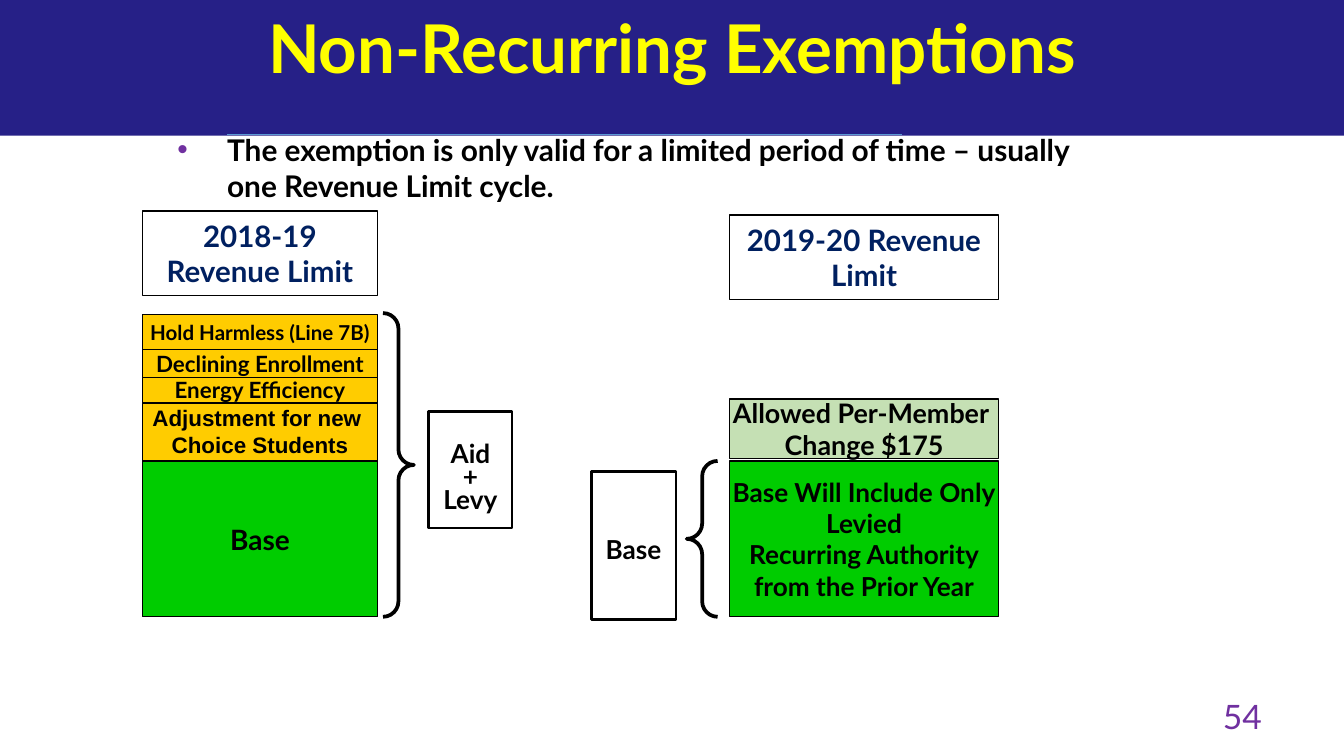
from dataclasses import dataclass

from lxml.etree import SubElement
from pptx import Presentation
from pptx.dml.color import RGBColor
from pptx.enum.shapes import MSO_CONNECTOR, MSO_SHAPE
from pptx.enum.text import MSO_ANCHOR, MSO_AUTO_SIZE, PP_ALIGN
from pptx.oxml.ns import qn
from pptx.util import Inches, Pt


@dataclass(frozen=True)
class Theme:
    font: str = "Lato"
    alternate_font: str = "Arial"
    black: str = "000000"
    band: str = "262087"
    title: str = "FFFF00"
    accent: str = "7030A0"
    rule: str = "5B9BD5"
    heading: str = "002060"
    base: str = "00CC00"
    exemption: str = "FFCC00"
    allowed: str = "C5E0B4"
    title_size: float = 36
    number_size: float = 18
    body_size: float = 16
    heading_size: float = 15.8
    base_size: float = 15
    allowed_size: float = 14.4
    label_size: float = 14
    exemption_size: float = 12
    small_size: float = 11


theme = Theme()


def write_text(shape, text, size, color=theme.black, font=theme.font, bold=True,
               align=PP_ALIGN.CENTER, anchor=MSO_ANCHOR.TOP, wrap=True):
    frame = shape.text_frame
    frame.text = text
    frame.word_wrap = wrap
    frame.auto_size = MSO_AUTO_SIZE.NONE
    frame.vertical_anchor = anchor
    for paragraph in frame.paragraphs:
        paragraph.alignment = align
        paragraph.space_before = Pt(0)
        paragraph.font.name = font
        paragraph.font.size = Pt(size)
        paragraph.font.bold = bold
        paragraph.font.color.rgb = RGBColor.from_string(color)


def add_box(kind, left, top, width, height, fill=None, line_width=0.75):
    shape = slide.shapes.add_shape(kind, Inches(left), Inches(top), Inches(width), Inches(height))
    shape.shadow.inherit = False
    if fill:
        shape.fill.solid()
        shape.fill.fore_color.rgb = RGBColor.from_string(fill)
    else:
        shape.fill.background()
    if line_width:
        shape.line.color.rgb = RGBColor.from_string(theme.black)
        shape.line.width = Pt(line_width)
    else:
        shape.line.fill.background()
    return shape


presentation = Presentation()
presentation.slide_width = Inches(10)
presentation.slide_height = Inches(10 * 9 / 16)
slide = presentation.slides.add_slide(presentation.slide_layouts[1])
title, body = slide.placeholders

band = add_box(MSO_SHAPE.RECTANGLE, -0.01, 0, 10.01, 1.01, theme.band, 0)
title.element.addprevious(band.element)

title.left, title.top, title.width, title.height = Inches(0), Inches(0), Inches(10), Inches(1.01)
write_text(title, "Non-Recurring Exemptions", theme.title_size, theme.title)

body.left, body.top, body.width, body.height = Inches(1.22), Inches(0.93), Inches(7), Inches(1.98)
write_text(body, "The exemption is only valid for a limited period of time – usually "
           "one Revenue Limit cycle.", theme.body_size, align=PP_ALIGN.LEFT)
properties = body.text_frame.paragraphs[0]._p.get_or_add_pPr()
properties.set("marL", str(Inches(0.37)))
properties.set("indent", str(-Inches(0.37)))
font_properties = properties.find(qn("a:defRPr"))
bullet_color = SubElement(properties, qn("a:buClr"))
SubElement(bullet_color, qn("a:srgbClr"), val=theme.accent)
SubElement(properties, qn("a:buChar"), char="•")
properties.append(font_properties)

rule = slide.shapes.add_connector(MSO_CONNECTOR.STRAIGHT, Inches(1.69), Inches(1), Inches(6.71), Inches(1))
rule.line.color.rgb = RGBColor.from_string(theme.rule)
rule.line.width = Pt(0.5)
SubElement(rule.element.spPr, qn("a:effectLst"))

left_column, left_width = 1.06, 1.75
right_column, right_width = 5.43, 2
base_top, base_height = 3.43, 1.16

for left, top, width, text in [
    (left_column, 1.57, left_width, "2018-19 Revenue Limit"),
    (right_column, 1.6, right_width, "2019-20 Revenue Limit"),
]:
    heading = add_box(MSO_SHAPE.RECTANGLE, left, top, width, 0.63)
    write_text(heading, text, theme.heading_size, theme.heading)

for kind, left, top, height in [
    (MSO_SHAPE.LEFT_BRACE, 5.11, base_top, base_height),
    (MSO_SHAPE.RIGHT_BRACE, 2.85, 2.33, 2.26),
]:
    brace = add_box(kind, left, top, 0.23, height, line_width=2)
    brace.adjustments[0] = 0.5
    brace.adjustments[1] = 0.5

for left, top, width, height, inset, text in [
    (4.4, 3.51, 0.63, 1.1, 0.52, "Base"),
    (3.19, 3.06, 0.62, 0.87, 0.26, "Aid\n+\nLevy"),
]:
    label = add_box(MSO_SHAPE.RECTANGLE, left, top, width, height, line_width=1.5)
    write_text(label, text, theme.label_size)
    label.text_frame.margin_top = Inches(inset)
    for paragraph in label.text_frame.paragraphs:
        paragraph.line_spacing = Pt(12.2)

left_blocks = [
    (base_top, base_height, theme.base, theme.base_size, theme.font, "Base"),
    (2.99, 0.44, theme.exemption, theme.exemption_size, theme.alternate_font,
     "Adjustment for new \nChoice Students"),
    (2.8, 0.2, theme.exemption, theme.exemption_size, theme.font, "Energy Efficiency"),
    (2.6, 0.21, theme.exemption, theme.exemption_size, theme.font, "Declining Enrollment"),
    (2.34, 0.26, theme.exemption, theme.small_size, theme.font, "Hold Harmless (Line 7B)"),
]
right_blocks = [
    (base_top, base_height, theme.base, theme.label_size, theme.font,
     "Base Will Include Only\nLevied\nRecurring Authority\nfrom the Prior Year"),
    (2.97, 0.44, theme.allowed, theme.allowed_size, theme.font, "Allowed Per-Member \nChange $175"),
]
for left, width, blocks in [
    (left_column, left_width, left_blocks),
    (right_column, right_width, right_blocks),
]:
    for top, height, fill, size, font, text in blocks:
        block = add_box(MSO_SHAPE.RECTANGLE, left, top, width, height, fill)
        write_text(block, text, size, font=font, anchor=MSO_ANCHOR.MIDDLE, wrap=False)

page_number = slide.shapes.add_textbox(Inches(9), Inches(5.13), Inches(0.69), Inches(0.47))
write_text(page_number, "54", theme.number_size, theme.accent, bold=False, align=PP_ALIGN.LEFT)

presentation.save("out.pptx")
